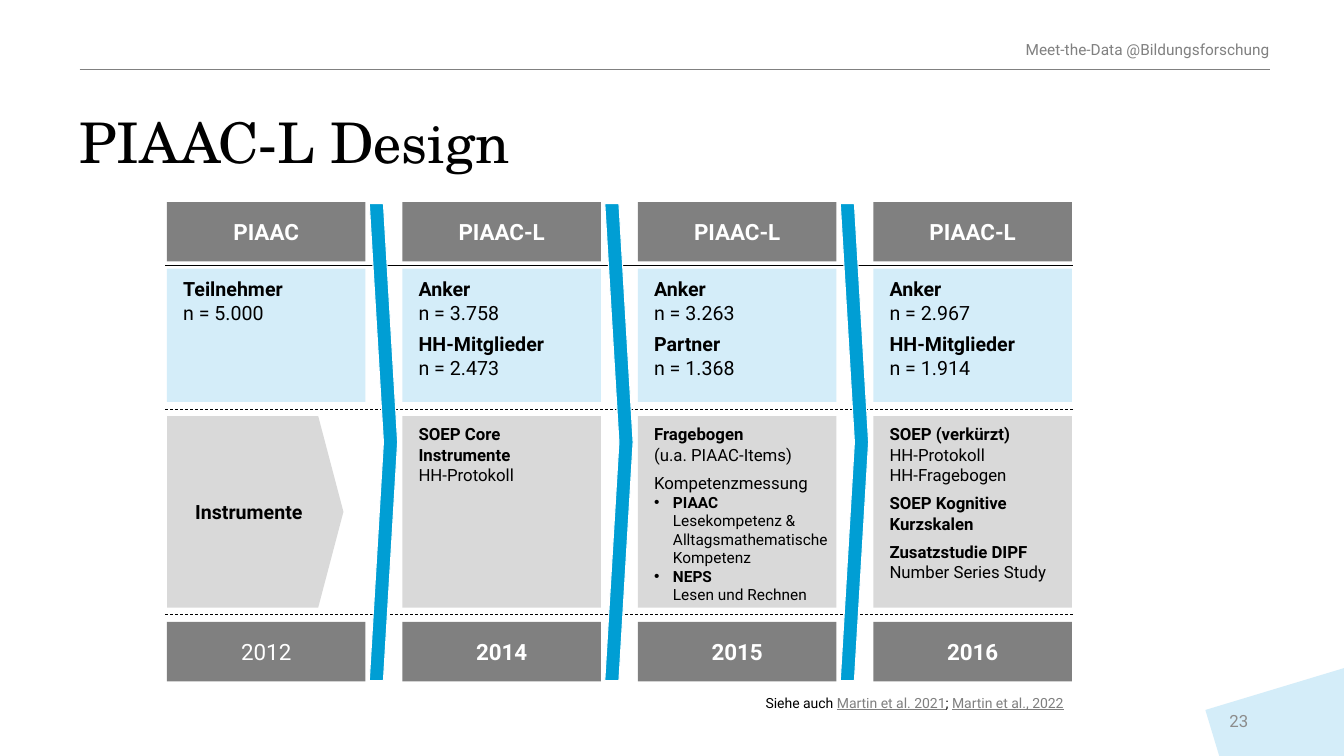
"""Build the PIAAC-L design slide: four survey waves with samples and instruments."""
from lxml import etree
from pptx import Presentation
from pptx.dml.color import RGBColor
from pptx.enum.dml import MSO_LINE
from pptx.enum.shapes import MSO_CONNECTOR, MSO_SHAPE
from pptx.enum.text import MSO_ANCHOR, PP_ALIGN
from pptx.oxml.ns import qn
from pptx.util import Pt

RECT, PENTAGON, CHEVRON = MSO_SHAPE.RECTANGLE, MSO_SHAPE.PENTAGON, MSO_SHAPE.CHEVRON
STRAIGHT, DASH = MSO_CONNECTOR.STRAIGHT, MSO_LINE.DASH
TOP, MIDDLE, BOTTOM = MSO_ANCHOR.TOP, MSO_ANCHOR.MIDDLE, MSO_ANCHOR.BOTTOM
LEFT, CENTER, RIGHT = PP_ALIGN.LEFT, PP_ALIGN.CENTER, PP_ALIGN.RIGHT
BLUE, PALE_BLUE = "009ED4", "D4EDF9"
GRAY, PALE_GRAY, LINK_GRAY = "808080", "D9D9D9", "7F7F7F"
BLACK, WHITE = "000000", "FFFFFF"

prs = Presentation()
prs.slide_width, prs.slide_height = Pt(960), Pt(540)
slide = prs.slides.add_slide(prs.slide_layouts[6])


def block(preset, *place, fill=None, anchor=TOP, insets=(7.2, 3.6, 7.2, 3.6)):
    place = [Pt(value) for value in place]
    if preset is None:
        area = slide.shapes.add_textbox(*place)
    else:
        area = slide.shapes.add_shape(preset, *place)
        area.shadow.inherit = False
        area.fill.solid()
        area.fill.fore_color.rgb = RGBColor.from_string(fill)
        area.line.fill.background()
    frame = area.text_frame
    frame.word_wrap = True
    frame.vertical_anchor = anchor
    frame.margin_left, frame.margin_top, frame.margin_right, frame.margin_bottom = map(Pt, insets)
    return area


def write(area, text, size=12, bold=False, color=BLACK, font="Roboto", align=LEFT,
          after=0, bullet=False, underline=False, spacing=None, same=False):
    frame = area.text_frame
    paragraph = frame.paragraphs[-1]
    if not same:
        if paragraph.runs:
            paragraph = frame.add_paragraph()
        if bullet:
            properties = paragraph._p.get_or_add_pPr()
            properties.set("marL", str(Pt(13.5)))
            properties.set("indent", str(-Pt(13.5)))
            etree.SubElement(properties, qn("a:buFont")).set("typeface", "Arial")
            etree.SubElement(properties, qn("a:buChar")).set("char", "•")
        paragraph.alignment = align
        paragraph.space_after = Pt(after)
        paragraph.line_spacing = spacing
    for number, line in enumerate(text.split("\n")):
        if number:
            paragraph.add_line_break()
        if line:
            run = paragraph.add_run()
            run.text = line
            run.font.size, run.font.bold, run.font.name = Pt(size), bold, font
            run.font.underline = underline
            run.font.color.rgb = RGBColor.from_string(color)


corner = block(RECT, 868.3, 490.3, 106.5, 66.3, fill=PALE_BLUE)
corner.rotation = 343.2
header = block(None, 206.6, 0, 700.5, 41.8, anchor=BOTTOM, insets=(0, 0, 0, 0))
write(header, "Meet-the-Data @Bildungsforschung", size=11, color=GRAY, align=RIGHT, after=12)
title = block(None, 56.9, 82.1, 850.3, 49.7, insets=(0, 0, 0, 0))
write(title, "PIAAC-L Design", size=40, font="TeX Gyre Schola", spacing=0.9)

waves = [
    ("PIAAC", "2012", [("Teilnehmer", "n = 5.000")], []),
    ("PIAAC-L", "2014", [("Anker", "n = 3.758"), ("HH-Mitglieder", "n = 2.473")],
     [("SOEP Core Instrumente", "\nHH-Protokoll", {"after": 6})]),
    ("PIAAC-L", "2015", [("Anker", "n = 3.263"), ("Partner", "n = 1.368")],
     [("Fragebogen", "\n(u.a. PIAAC-Items)", {"after": 6}),
      ("", "Kompetenzmessung", {}),
      ("PIAAC", "\nLesekompetenz & Alltagsmathematische Kompetenz", {"size": 11, "bullet": True}),
      ("NEPS", "\nLesen und Rechnen", {"size": 11, "bullet": True})]),
    ("PIAAC-L", "2016", [("Anker", "n = 2.967"), ("HH-Mitglieder", "n = 1.914")],
     [("SOEP (verkürzt)", "\nHH-Protokoll\nHH-Fragebogen", {"after": 6}),
      ("SOEP Kognitive Kurzskalen", "", {"after": 6}),
      ("Zusatzstudie DIPF", "\nNumber Series Study", {"after": 6})]),
]
first_left, pitch, width = 119.3, 168.2, 141.8
cell_insets = (11.5, 5.8, 5.8, 5.8)

for index, (study, year, samples, instruments) in enumerate(waves):
    left = first_left + pitch * index
    for label, top, bold in ((study, 144.3, True), (year, 444.2, index > 0)):
        band = block(RECT, left, top, width, 42.5, fill=GRAY, anchor=MIDDLE)
        write(band, label, size=16, bold=bold, color=WHITE, align=CENTER)
    sample_cell = block(RECT, left, 192, width, 95.2, fill=PALE_BLUE, insets=cell_insets)
    for group, count in samples:
        write(sample_cell, group, size=14, bold=True, after=6)
        write(sample_cell, "\n" + count, size=14, same=True)
    if instruments:
        instrument_cell = block(RECT, left, 297.2, width, 136.8, fill=PALE_GRAY, insets=cell_insets)
        for heading, detail, style in instruments:
            write(instrument_cell, heading, bold=True, **style)
            write(instrument_cell, detail, size=style.get("size", 12), same=True)

row_label = block(PENTAGON, first_left, 297.2, 126, 136.8, fill=PALE_GRAY, anchor=MIDDLE)
row_label.adjustments[0] = 0.143
write(row_label, "Instrumente", size=14, bold=True, align=CENTER)

rules = [
    (56.9, 907.1, 49.6, GRAY, 0.75, None),
    (118.1, 766.6, 189.5, BLACK, 0.5, None),
    (118.1, 766.6, 292.3, BLACK, 0.5, DASH),
    (118.1, 766.6, 438.9, BLACK, 0.5, DASH),
]
for start, end, height, color, weight, dash in rules:
    rule = slide.shapes.add_connector(STRAIGHT, Pt(start), Pt(height), Pt(end), Pt(height))
    rule.line.color.rgb = RGBColor.from_string(color)
    rule.line.width = Pt(weight)
    rule.line.dash_style = dash
    etree.SubElement(rule._element.spPr, qn("a:effectLst"))

for index in range(len(waves) - 1):
    step = block(CHEVRON, 263.8 + pitch * index, 145.5, 20.2, 340.6, fill=BLUE)
    step.line.color.rgb = RGBColor.from_string(WHITE)
    step.line.width = Pt(0.75)

sources = block(None, 118.1, 492.5, 648.7, 19.4)
write(sources, "Siehe auch ", size=10, align=RIGHT)
write(sources, "Martin et al. 2021", size=10, color=LINK_GRAY, underline=True, same=True)
write(sources, "; ", size=10, same=True)
write(sources, "Martin et al., 2022", size=10, color=LINK_GRAY, underline=True, same=True)

page_number = block(None, 860.4, 500.4, 49, 28.8, anchor=MIDDLE)
write(page_number, "23", color="8C8C8C", align=CENTER, after=6)

prs.save("out.pptx")
